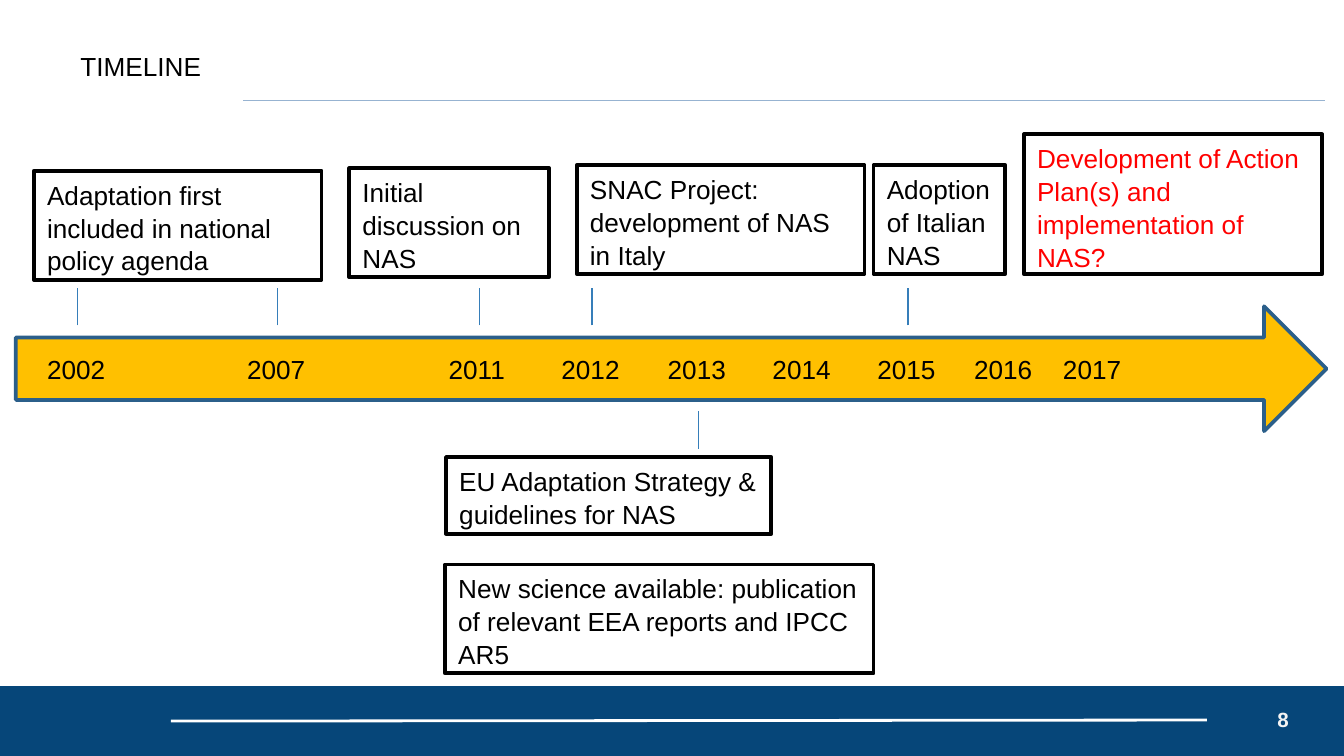
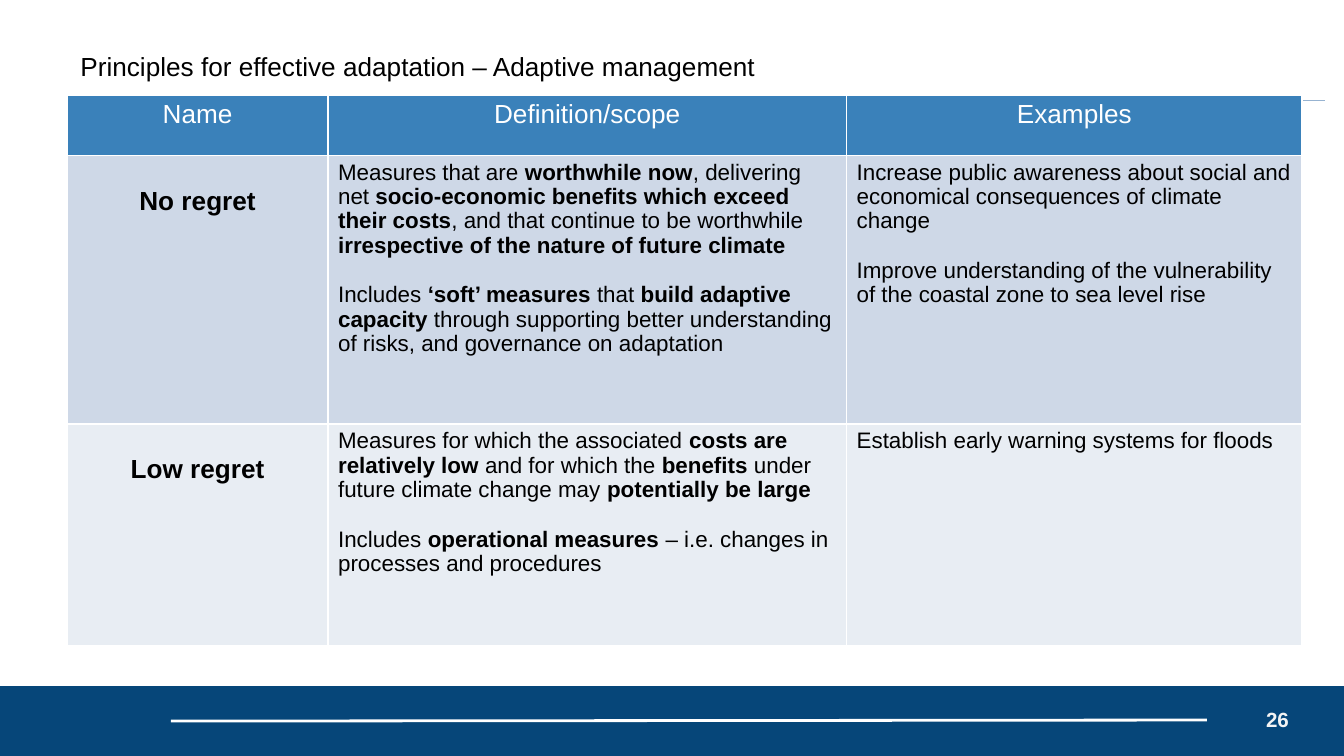
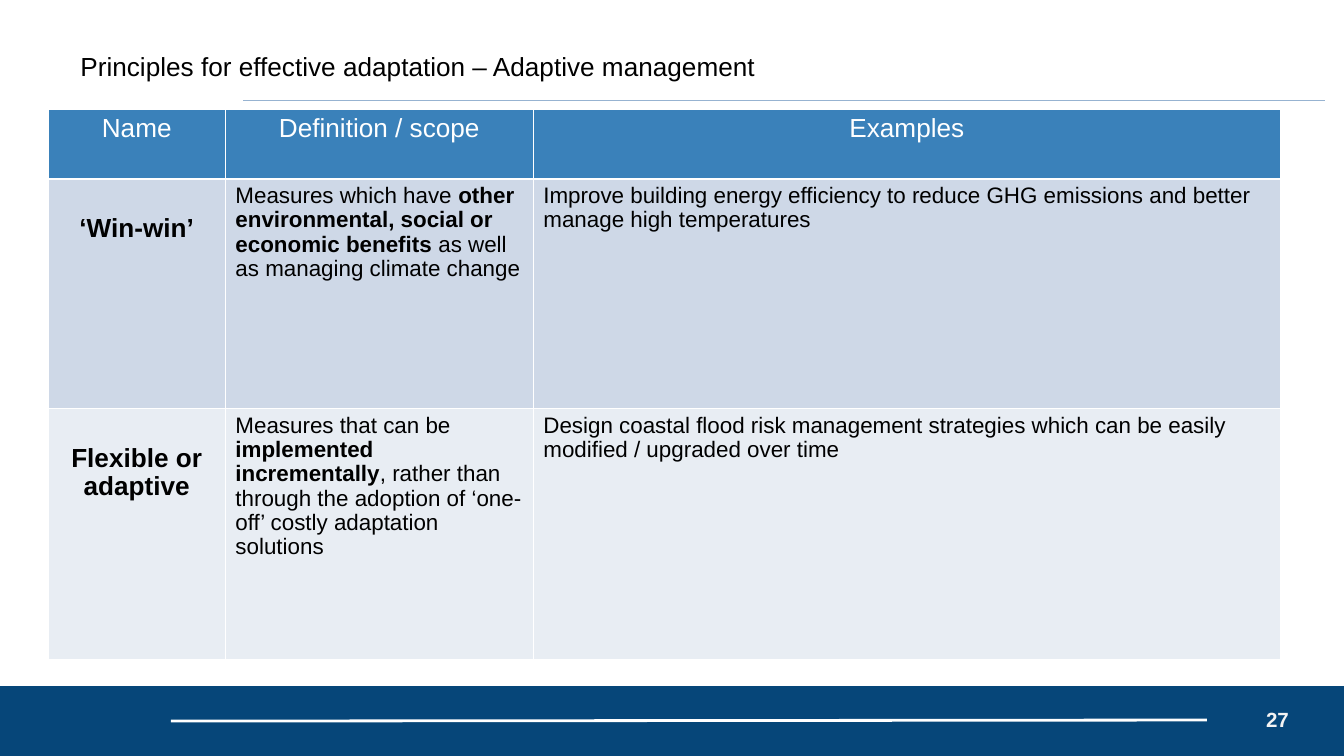
from lxml.etree import SubElement
from pptx import Presentation
from pptx.dml.color import RGBColor
from pptx.enum.shapes import MSO_CONNECTOR, MSO_SHAPE
from pptx.enum.text import MSO_ANCHOR, PP_ALIGN
from pptx.oxml.ns import qn
from pptx.util import Cm, Pt

tint = RGBColor.from_string
NAVY, BLUE, GOLD = "064679", "3A81BA", "FFC000"
EDGE, TICK, RULE = "2B5F8A", "367EB9", "97B3D1"
BLACK, WHITE, RED, PALE = "000000", "FFFFFF", "FF0000", "F3F3F3"
ROWS = [BLUE, "CED8E7", "E8EDF3"]


def write(frame, text, size=14, color=BLACK, bold=False, align=PP_ALIGN.LEFT, space=1.0):
    for i, line in enumerate(text.split("\n")):
        para = frame.add_paragraph() if i else frame.paragraphs[0]
        para.alignment = align
        para.line_spacing = space
        para.space_before = Pt(13.5 if i else 0)
        para.font.name = "Arial"
        para.font.size = Pt(size)
        para.font.color.rgb = tint(color)
        parts = line.split("*")
        if len(parts) == 1:
            para.font.bold = bold
        for j, part in enumerate(parts):
            if part:
                run = para.add_run()
                run.text = part
                if len(parts) > 1:
                    run.font.bold = j % 2 == 1


def rule(slide, x1, y1, x2, y2, color, width=0.75):
    line = slide.shapes.add_connector(MSO_CONNECTOR.STRAIGHT, Cm(x1), Cm(y1), Cm(x2), Cm(y2))
    line.line.color.rgb = tint(color)
    line.line.width = Pt(width)
    SubElement(line._element.spPr, qn("a:effectLst"))


deck = Presentation()
deck.slide_width, deck.slide_height = Cm(25.4), Cm(14.29)

theme = "Principles for effective adaptation – Adaptive management"
slides = []
for head, page in [("TIMELINE", "8"), (theme, "26"), (theme, "27")]:
    slide = deck.slides.add_slide(deck.slide_layouts[5])
    slides.append(slide)
    title = slide.shapes.title
    title.left, title.top, title.width, title.height = Cm(1.27), Cm(0.1), Cm(22.86), Cm(1.7)
    band = slide.shapes.add_shape(MSO_SHAPE.RECTANGLE, 0, Cm(12.97), Cm(25.4), Cm(1.32))
    band.shadow.inherit = False
    band.fill.solid()
    band.fill.fore_color.rgb = tint(NAVY)
    band.line.fill.background()
    rule(slide, 3.23, 13.63, 22.81, 13.61, WHITE, 1.5)
    rule(slide, 4.6, 1.9, 25.04, 1.9, RULE)
    number = slide.shapes.add_textbox(Cm(23.09), Cm(13.06), Cm(1.52), Cm(1.09))
    for shape, anchor in [(title, MSO_ANCHOR.BOTTOM), (number, MSO_ANCHOR.MIDDLE)]:
        frame = shape.text_frame
        frame.word_wrap = True
        frame.vertical_anchor = anchor
        frame.margin_left = frame.margin_right = Cm(0.25)
        frame.margin_top = frame.margin_bottom = Cm(0.25)
    write(title.text_frame, head)
    write(number.text_frame, page, 11, PALE, True, PP_ALIGN.RIGHT)

slide = slides[0]
arrow = slide.shapes.add_shape(MSO_SHAPE.RIGHT_ARROW, Cm(0.3), Cm(5.79), Cm(24.77), Cm(2.36))
arrow.shadow.inherit = False
arrow.fill.solid()
arrow.fill.fore_color.rgb = tint(GOLD)
arrow.line.color.rgb = tint(EDGE)
arrow.line.width = Pt(2)

above, below = 5.44, 7.77
years = [
    ("2002", 0.64, above), ("2007", 4.42, above), ("2011", 8.23, above),
    ("2012", 10.36, above), ("2013", 12.37, below), ("2014", 14.35, None),
    ("2015", 16.33, above), ("2016", 18.16, None), ("2017", 19.84, None),
]
for year, left, top in years:
    label = slide.shapes.add_textbox(Cm(left), Cm(6.53), Cm(1.65), Cm(0.86))
    label.text_frame.word_wrap = False
    write(label.text_frame, year, space=1.05)
    if top:
        rule(slide, left + 0.83, top + 0.71, left + 0.83, top, TICK)

events = [
    ("Adaptation first included in national policy agenda", 0.64, 3.23, 5.44, 2.06),
    ("Initial discussion on NAS", 6.6, 3.18, 3.78, 2.06),
    ("SNAC Project: development of NAS in Italy", 10.9, 3.12, 5.44, 2.06),
    ("Adoption of Italian NAS", 16.51, 3.12, 2.49, 2.06),
    ("Development of Action Plan(s) and implementation of NAS?", 19.35, 2.54, 5.64, 2.64),
    ("EU Adaptation Strategy & guidelines for NAS", 8.43, 8.64, 6.15, 1.45),
    ("New science available: publication of relevant EEA reports and IPCC AR5",
     8.41, 10.67, 8.1, 2.06),
]
for text, left, top, width, height in events:
    box = slide.shapes.add_shape(MSO_SHAPE.RECTANGLE, Cm(left), Cm(top), Cm(width), Cm(height))
    box.shadow.inherit = False
    box.line.color.rgb = tint(BLACK)
    box.line.width = Pt(2)
    future = text.endswith("?")
    if future:
        box.fill.background()
    else:
        box.fill.solid()
        box.fill.fore_color.rgb = tint(WHITE)
    box.text_frame.word_wrap = True
    box.text_frame.vertical_anchor = MSO_ANCHOR.TOP
    write(box.text_frame, text, color=RED if future else BLACK, space=1.05)

regret = [
    ["Name", "Definition/scope", "Examples"],
    ["No regret",
     "Measures that are *worthwhile now*, delivering net *socio-economic benefits which exceed "
     "their costs*, and that continue to be worthwhile *irrespective of the nature of future "
     "climate*\nIncludes *‘soft’ measures* that *build adaptive capacity* through supporting "
     "better understanding of risks, and governance on adaptation",
     "Increase public awareness about social and economical consequences of climate change\n"
     "Improve understanding of the vulnerability of the coastal zone to sea level rise"],
    ["Low regret",
     "Measures for which the associated *costs are relatively low *and for which the *benefits* "
     "under future climate change may *potentially be large*\n"
     "Includes *operational measures *– i.e. changes in processes and procedures",
     "Establish early warning systems for floods"],
]
gains = [
    ["Name", "Definition / scope", "Examples"],
    ["‘Win-win’",
     "Measures which have *other environmental, social or economic benefits* as well as "
     "managing climate change",
     "Improve building energy efficiency to reduce GHG emissions and better manage high "
     "temperatures"],
    ["Flexible or adaptive",
     "Measures that can be *implemented incrementally*, rather than through the adoption of "
     "‘one-off’ costly adaptation solutions",
     "Design coastal flood risk management strategies which can be easily modified / upgraded "
     "over time"],
]
tables = [
    (slides[1], regret, 1.27, 1.8, [4.93, 9.8, 8.61], [1.14, 5.08, 4.19], 0.6),
    (slides[2], gains, 0.91, 2.06, [3.35, 5.82, 14.12], [1.32, 4.34, 4.75], 0.68),
]
for slide, data, left, top, widths, heights, drop in tables:
    grid = slide.shapes.add_table(
        3, 3, Cm(left), Cm(top), Cm(sum(widths)), Cm(sum(heights))).table
    for col, width in zip(grid.columns, widths):
        col.width = Cm(width)
    for r, row in enumerate(data):
        grid.rows[r].height = Cm(heights[r])
        for c, text in enumerate(row):
            cell = grid.cell(r, c)
            cell.fill.solid()
            cell.fill.fore_color.rgb = tint(ROWS[r])
            name = r > 0 and c == 0
            cell.margin_left = cell.margin_right = Cm(0.19)
            cell.margin_top = Cm(drop if name else 0.1)
            cell.margin_bottom = Cm(0.1)
            large = r == 0 or c == 0
            write(cell.text_frame, text, 14 if large else 12, BLACK if r else WHITE, name,
                  PP_ALIGN.CENTER if large else PP_ALIGN.LEFT, 0.97)

deck.save("out.pptx")
